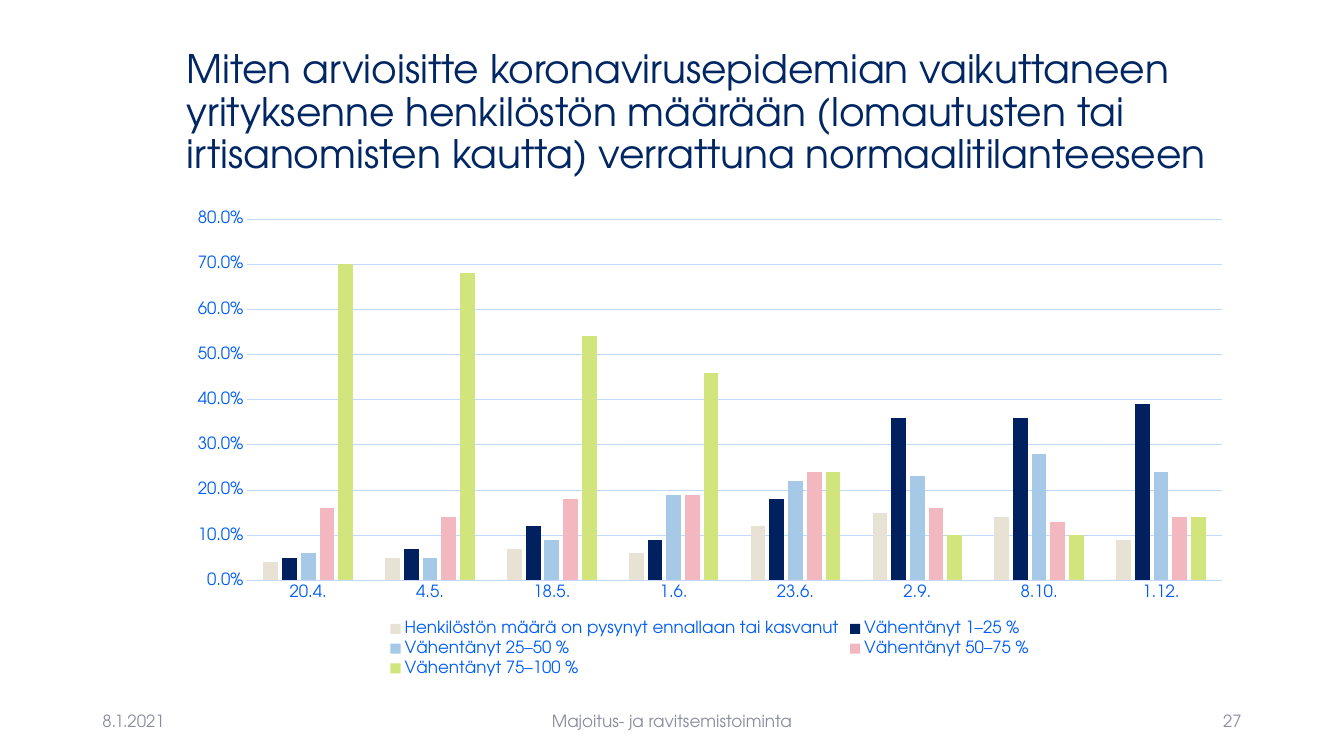
"""Build a slide charting how the epidemic changed staff numbers."""
from dataclasses import dataclass

from pptx import Presentation
from pptx.chart.data import CategoryChartData
from pptx.dml.color import RGBColor
from pptx.enum.chart import XL_CHART_TYPE, XL_LEGEND_POSITION, XL_TICK_MARK
from pptx.enum.text import MSO_ANCHOR, PP_ALIGN
from pptx.util import Inches, Pt

SLIDE_WIDTH, SLIDE_HEIGHT = Inches(13.33), Inches(7.5)
COLUMNS, ROWS = 160, 150


@dataclass(frozen=True)
class Theme:
    """Colours, typeface and type sizes of the slide."""
    face: str = "TeX Gyre Adventor"
    title: str = "002663"
    footer: str = "8C8E9F"
    axis: str = "005DF3"
    grid: str = "C1D9FF"
    title_size: int = 28
    small_size: int = 12
    chart_size: int = 10
    line_width: float = 0.75


@dataclass(frozen=True)
class Area:
    """A rectangle in grid columns and rows."""
    column: int
    row: int
    columns: int
    rows: int

    def box(self) -> tuple[int, int, int, int]:
        """Return left, top, width and height as lengths."""
        across, down = SLIDE_WIDTH / COLUMNS, SLIDE_HEIGHT / ROWS
        return (round(self.column * across), round(self.row * down),
                round(self.columns * across), round(self.rows * down))


@dataclass(frozen=True)
class StaffChange:
    """One answer option and its share at each survey date."""
    answer: str
    shares: tuple[float, ...]
    color: str


@dataclass(frozen=True)
class FooterPart:
    """One text in the footer row."""
    text: str
    column: int
    columns: int
    align: PP_ALIGN


THEME = Theme()
TITLE = ("Miten arvioisitte koronavirusepidemian vaikuttaneen yrityksenne henkilöstön "
         "määrään (lomautusten tai irtisanomisten kautta) verrattuna normaalitilanteeseen")
TITLE_AREA = Area(21, 8, 127, 29)
CHART_AREA = Area(21, 40, 127, 95)
FOOTER_ROW, FOOTER_ROWS = 139, 8
FOOTER = (
    FooterPart("8.1.2021", 11, 36, PP_ALIGN.LEFT),
    FooterPart("Majoitus- ja ravitsemistoiminta", 53, 54, PP_ALIGN.CENTER),
    FooterPart("27", 113, 36, PP_ALIGN.RIGHT),
)
SURVEY_DATES = ("20.4.", "4.5.", "18.5.", "1.6.", "23.6.", "2.9.", "8.10.", "1.12.")
CHANGES = (
    StaffChange("Henkilöstön määrä on pysynyt ennallaan tai kasvanut",
                (0.04, 0.05, 0.07, 0.06, 0.12, 0.15, 0.14, 0.09), "E8E2D5"),
    StaffChange("Vähentänyt 1–25 %",
                (0.05, 0.07, 0.12, 0.09, 0.18, 0.36, 0.36, 0.39), "002060"),
    StaffChange("Vähentänyt 25–50 %",
                (0.06, 0.05, 0.09, 0.19, 0.22, 0.23, 0.28, 0.24), "A5C9E7"),
    StaffChange("Vähentänyt 50–75 %",
                (0.16, 0.14, 0.18, 0.19, 0.24, 0.16, 0.13, 0.14), "F2B7BF"),
    StaffChange("Vähentänyt 75–100 %",
                (0.7, 0.68, 0.54, 0.46, 0.24, 0.1, 0.1, 0.14), "D1E57C"),
)


def style_font(font, size: float, color: str) -> None:
    """Set the theme face with a size and colour."""
    font.name = THEME.face
    font.size = Pt(size)
    font.bold = False
    font.color.rgb = RGBColor.from_string(color)


def style_line(line) -> None:
    """Give a chart line the grid colour and width."""
    line.color.rgb = RGBColor.from_string(THEME.grid)
    line.width = Pt(THEME.line_width)


def add_text(slide, text: str, area: Area, *, size: float, color: str,
             align: PP_ALIGN = PP_ALIGN.LEFT, spacing: float = 1.0) -> None:
    """Add a wrapped, vertically centred text."""
    frame = slide.shapes.add_textbox(*area.box()).text_frame
    frame.word_wrap = True
    frame.vertical_anchor = MSO_ANCHOR.MIDDLE
    paragraph = frame.paragraphs[0]
    paragraph.alignment = align
    paragraph.line_spacing = spacing
    run = paragraph.add_run()
    run.text = text
    style_font(run.font, size, color)


def add_staff_chart(slide) -> None:
    """Add the clustered columns of answers by survey date."""
    answers = CategoryChartData(number_format="0.0%")
    answers.categories = SURVEY_DATES
    for change in CHANGES:
        answers.add_series(change.answer, change.shares)
    chart = slide.shapes.add_chart(
        XL_CHART_TYPE.COLUMN_CLUSTERED, *CHART_AREA.box(), answers).chart
    chart.has_title = False
    style_font(chart.font, THEME.chart_size, THEME.title)

    columns = chart.plots[0]
    columns.gap_width = 219
    columns.overlap = -27
    columns.vary_by_categories = False
    for series, change in zip(columns.series, CHANGES):
        series.format.fill.solid()
        series.format.fill.fore_color.rgb = RGBColor.from_string(change.color)
        series.invert_if_negative = False

    dates, shares = chart.category_axis, chart.value_axis
    for axis in (dates, shares):
        axis.major_tick_mark = XL_TICK_MARK.NONE
        axis.minor_tick_mark = XL_TICK_MARK.NONE
        style_font(axis.tick_labels.font, THEME.small_size, THEME.axis)
    style_line(dates.format.line)
    shares.format.line.fill.background()
    shares.minimum_scale, shares.maximum_scale, shares.major_unit = 0, 0.8, 0.1
    shares.has_major_gridlines = True
    style_line(shares.major_gridlines.format.line)
    shares.tick_labels.number_format = "0.0%"
    shares.tick_labels.number_format_is_linked = False

    chart.has_legend = True
    chart.legend.position = XL_LEGEND_POSITION.BOTTOM
    chart.legend.include_in_layout = False
    style_font(chart.legend.font, THEME.small_size, THEME.axis)


def main() -> None:
    """Build and save the slide."""
    deck = Presentation()
    deck.slide_width, deck.slide_height = SLIDE_WIDTH, SLIDE_HEIGHT
    slide = deck.slides.add_slide(deck.slide_layouts[6])
    add_text(slide, TITLE, TITLE_AREA, size=THEME.title_size, color=THEME.title, spacing=0.9)
    for part in FOOTER:
        add_text(slide, part.text, Area(part.column, FOOTER_ROW, part.columns, FOOTER_ROWS),
                 size=THEME.small_size, color=THEME.footer, align=part.align)
    add_staff_chart(slide)
    deck.save("out.pptx")


if __name__ == "__main__":
    main()
